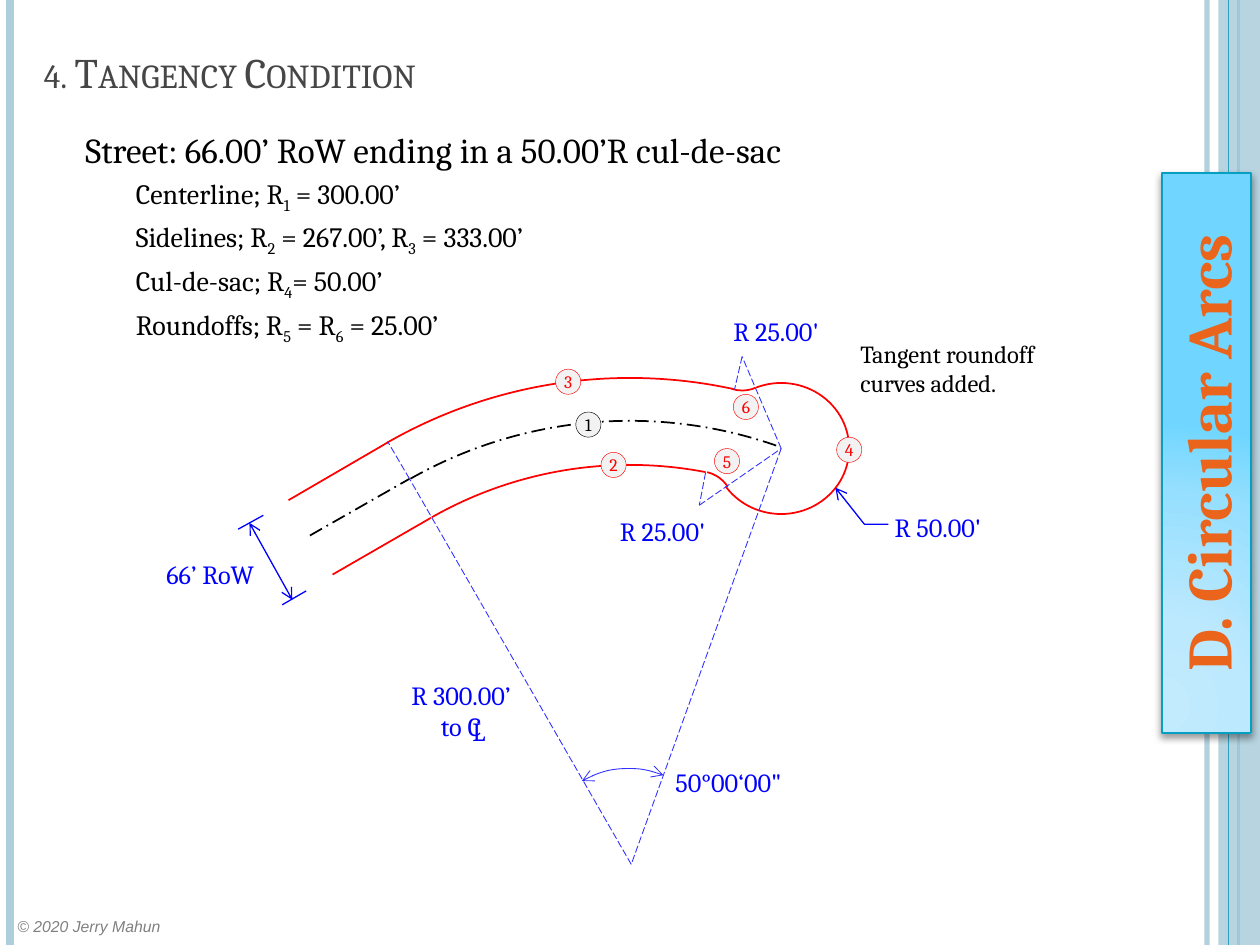
from dataclasses import dataclass
from itertools import pairwise

from lxml import etree
from pptx import Presentation, util as u
from pptx.dml.color import RGBColor
from pptx.enum import dml, shapes, text
from pptx.oxml import parse_xml
from pptx.oxml.ns import nsdecls, qn

SHAPE, DASH = shapes.MSO_SHAPE, dml.MSO_LINE
LEFT, CENTER = text.PP_ALIGN.LEFT, text.PP_ALIGN.CENTER
TOP, MIDDLE, BOTTOM = text.MSO_ANCHOR.TOP, text.MSO_ANCHOR.MIDDLE, text.MSO_ANCHOR.BOTTOM


@dataclass(frozen=True)
class Theme:
    font: str = "Cambria"
    footer_font: str = "Arial"
    black: str = "000000"
    title: str = "464646"
    grey: str = "808080"
    badge: str = "F2F2F2"
    red: str = "FF0000"
    label: str = "0000FF"
    construction: str = "3333FF"
    pale: str = "ADCEDC"
    teal: str = "2DA2BF"
    banner_line: str = "079EC3"
    banner_text: str = "EB641B"
    banner_stops: tuple = ((0, "C2EBFD"), (30, "BCE9FE"), (75, "96DFFE"), (100, "70D6FF"))
    banner_size: int = 36
    title_size: int = 24
    lead_size: int = 20
    detail_size: int = 16
    label_size: int = 15
    note_size: int = 14
    badge_size: int = 10
    footer_size: int = 9


class SlideBuilder:
    """Draws on a grid whose square cell is a tenth of the slide's width."""

    def __init__(self, presentation, theme):
        self.theme = theme
        self.cell = presentation.slide_width / 10
        self.slide = presentation.slides.add_slide(presentation.slide_layouts[6])

    def grid(self, *cells):
        return [round(value * self.cell) for value in cells]

    def set_alpha(self, fill_element, percent):
        color = fill_element.find(".//" + qn("a:srgbClr"))
        etree.SubElement(color, qn("a:alpha")).set("val", str(percent * 1000))

    def stroke(self, shape, color, width, dash=None, ends=()):
        shape.line.color.rgb = RGBColor.from_string(color)
        shape.line.width = u.Pt(width)
        if dash:
            shape.line.dash_style = dash
        for end in ends:
            etree.SubElement(shape.line._ln, qn(f"a:{end}End")).set("type", "arrow")

    def line(self, start, end, color, width, **style):
        connector = self.slide.shapes.add_connector(
            shapes.MSO_CONNECTOR.STRAIGHT, *self.grid(*start, *end))
        self.stroke(connector, color, width, **style)
        etree.SubElement(connector._element.spPr, qn("a:effectLst"))
        return connector

    def chain(self, points, color, width, **style):
        for start, end in pairwise(points):
            self.line(start, end, color, width, **style)

    def polyline(self, points, color, width, **style):
        first, *rest = [self.grid(*point) for point in points]
        builder = self.slide.shapes.build_freeform(*first)
        builder.add_line_segments(rest, close=False)
        shape = builder.convert_to_shape()
        shape.fill.background()
        shape.shadow.inherit = False
        self.stroke(shape, color, width, **style)

    def shape(self, kind, box, fill=None):
        shape = self.slide.shapes.add_shape(kind, *self.grid(*box))
        shape.shadow.inherit = False
        shape.line.fill.background()
        if fill:
            shape.fill.solid()
            shape.fill.fore_color.rgb = RGBColor.from_string(fill)
        else:
            shape.fill.background()
        return shape

    def arc(self, center, radii, angles, color, width, **style):
        """Arc clockwise between two angles in degrees, from the x axis."""
        (x, y), (rx, ry) = center, radii
        shape = self.shape(SHAPE.ARC, (x - rx, y - ry, 2 * rx, 2 * ry))
        for index, angle in enumerate(angles):
            shape.adjustments[index] = angle * 0.6
        self.stroke(shape, color, width, **style)

    def set_text(self, shape, content, size, color, align=LEFT, anchor=TOP, wrap=False, inset=True):
        frame = shape.text_frame
        frame.word_wrap, frame.vertical_anchor = wrap, anchor
        if not inset:
            frame.margin_left = frame.margin_right = frame.margin_top = frame.margin_bottom = 0
        paragraph = frame.paragraphs[0]
        paragraph.text, paragraph.alignment = content, align
        self.font(paragraph, size, color)
        return paragraph

    def font(self, paragraph, size, color):
        font = paragraph.font
        font.name, font.size = self.theme.font, u.Pt(size)
        font.color.rgb = RGBColor.from_string(color)

    def text(self, box, content, size, color, **style):
        shape = self.slide.shapes.add_textbox(*self.grid(*box))
        return shape, self.set_text(shape, content, size, color, **style)

    def label(self, box, content, align=LEFT):
        self.text(box, content, self.theme.label_size, self.theme.label, align=align, inset=False)

    def badge(self, number, left, top, color):
        shape = self.shape(SHAPE.OVAL, (left, top, 0.2, 0.2), self.theme.badge)
        self.stroke(shape, color, 0.25)
        self.set_text(shape, number, self.theme.badge_size, color, CENTER, MIDDLE, inset=False)

    def detail(self, frame, pieces):
        """Indented line in which every second piece is a subscript."""
        paragraph = frame.add_paragraph()
        self.font(paragraph, self.theme.detail_size, self.theme.black)
        paragraph.space_before = u.Pt(self.theme.detail_size * 0.2)
        properties = paragraph._p.get_or_add_pPr()
        properties.set("marL", str(self.grid(0.4)[0]))
        properties.set("indent", "0")
        for index, piece in enumerate(pieces):
            run = paragraph.add_run()
            run.text = piece
            if index % 2:
                run.font._element.set("baseline", "-25000")

    def banner(self, box, content):
        theme = self.theme
        shape = self.shape(SHAPE.RECTANGLE, box)
        shape.rotation = 270
        self.stroke(shape, theme.banner_line, 1)
        stops = "".join(f'<a:gs pos="{position * 1000}"><a:srgbClr val="{color}"/></a:gs>'
                        for position, color in theme.banner_stops)
        properties = shape._element.spPr
        properties.replace(properties.find(qn("a:noFill")), parse_xml(
            f'<a:gradFill {nsdecls("a")} rotWithShape="1"><a:gsLst>{stops}</a:gsLst>'
            '<a:path path="circle"><a:fillToRect l="5000" t="100000" r="120000" b="10000"/>'
            '</a:path></a:gradFill>'))
        properties.find(qn("a:effectLst")).append(parse_xml(
            f'<a:outerShdw {nsdecls("a")} blurRad="{u.Pt(4)}" dist="{u.Pt(2)}" dir="5400000">'
            '<a:srgbClr val="000000"><a:alpha val="40000"/></a:srgbClr></a:outerShdw>'))
        paragraph = self.set_text(shape, content, theme.banner_size, theme.banner_text,
                                  CENTER, MIDDLE)
        paragraph.font.bold = True


def add_frame(builder, theme):
    def rule(x, color, width):
        return builder.line((x, 0), (x, 7.5), color, width)

    builder.set_alpha(rule(9.58, theme.pale, 3).line._ln, 93)
    rule(0.08, theme.pale, 4.5)
    rule(9.83, theme.teal, 1.5)
    band = builder.shape(SHAPE.RECTANGLE, (9.67, 0, 0.33, 7.5), theme.pale)
    builder.set_alpha(band._element.spPr.find(qn("a:solidFill")), 87)
    rule(9.75, theme.teal, 0.75)
    _, footer = builder.text((0.04, 7.23, 1.44, 0.25), "© 2020 Jerry Mahun",
                             theme.footer_size, theme.grey)
    footer.font.name, footer.font.italic = theme.footer_font, True
    builder.banner((7.35, 3.24, 4.45, 0.71), "D. Circular Arcs")


def add_text(builder, theme):
    body, lead = builder.text((0.58, 0.97, 8.08, 6.11),
                              "Street: 66.00’ RoW ending in a 50.00’R cul-de-sac",
                              theme.lead_size, theme.black, wrap=True)
    lead.space_before = u.Pt(6)
    for pieces in (("Centerline; R", "1", " = 300.00’"),
                   ("Sidelines; R", "2", " = 267.00’, R", "3", " = 333.00’"),
                   ("Cul-de-sac; R", "4", "= 50.00’"),
                   ("Roundoffs; R", "5", " = R", "6", " = 25.00’")):
        builder.detail(body.text_frame, pieces)
    _, title = builder.text((0.25, 0.3, 8.42, 0.52), "4. Tangency Condition",
                            theme.title_size, theme.title, anchor=BOTTOM, wrap=True)
    title.runs[0].font._element.set("cap", "small")
    builder.text((6.73, 2.64, 1.93, 0.57), "Tangent roundoff curves added.",
                 theme.note_size, theme.black, wrap=True)


def add_street(builder, theme):
    center, bulb, upper, lower = (5, 6.87), (6.2, 3.56), (5.89, 2.83), (5.55, 4.01)
    for radius, angles, start, end, color, dash in (
            (3.18, (240.38, 280.88), (2.64, 4.56), (3.42, 4.11), theme.red, None),
            (3.53, (240.44, 289.62), (2.46, 4.25), (3.25, 3.8), theme.black, DASH.LONG_DASH_DOT),
            (3.87, (240.1, 282.27), (2.29, 3.97), (3.08, 3.51), theme.red, None)):
        builder.arc(center, (radius, radius), angles, color, 1, dash=dash)
        builder.line(start, end, color, 1, dash=dash)
    builder.arc(bulb, (0.54, 0.52), (247.66, 145.59), theme.red, 1)
    for roundoff, angles in ((upper, (66.62, 107.26)), (lower, (283.55, 326.92))):
        builder.arc(roundoff, (0.27, 0.27), angles, theme.red, 1)

    builder.polyline([(6.63, 3.87), (6.86, 4.16), (7.05, 4.16)], theme.label, 0.75, ends=["head"])
    builder.line((1.98, 4.15), (2.32, 4.76), theme.label, 0.75, ends=["head", "tail"])
    builder.line((2.43, 4.69), (2.24, 4.8), theme.label, 0.75)
    builder.line((2.09, 4.09), (1.89, 4.2), theme.label, 0.75)
    for points in ([(5.6, 3.75), lower, bulb, upper, (5.83, 3.09)],
                   [bulb, (5.01, 6.86), (3.25, 3.8), (3.08, 3.51)]):
        builder.chain(points, theme.construction, 0.5, dash=DASH.LONG_DASH)
    builder.arc((4.99, 6.85), (0.75, 0.75), (240.34, 291.61), theme.construction, 0.5,
                ends=["head", "tail"])

    builder.label((7.1, 4.06, 0.78, 0.25), "R 50.00'")
    builder.label((1.32, 4.43, 0.8, 0.25), "66’ RoW")
    builder.label((3.21, 5.39, 0.9, 0.5), "R 300.00’\vto C", CENTER)
    builder.label((3.75, 5.68, 0.14, 0.25), "L")
    for left, top in ((5.82, 2.5), (4.92, 4.09)):
        builder.label((left, top, 0.78, 0.25), "R 25.00'")
    builder.label((5.36, 6.08, 0.91, 0.25), "50°00‘00\"")
    builder.badge("1", 4.57, 3.27, theme.black)
    for number, left, top in (("2", 4.77, 3.59), ("3", 4.41, 2.93), ("4", 6.64, 3.47),
                              ("6", 5.82, 3.13), ("5", 5.67, 3.56)):
        builder.badge(number, left, top, theme.red)


def main():
    presentation = Presentation()
    presentation.slide_width, presentation.slide_height = u.Inches(10), u.Inches(7.5)
    theme = Theme()
    builder = SlideBuilder(presentation, theme)
    for add_part in (add_frame, add_text, add_street):
        add_part(builder, theme)
    presentation.save("out.pptx")


if __name__ == "__main__":
    main()
